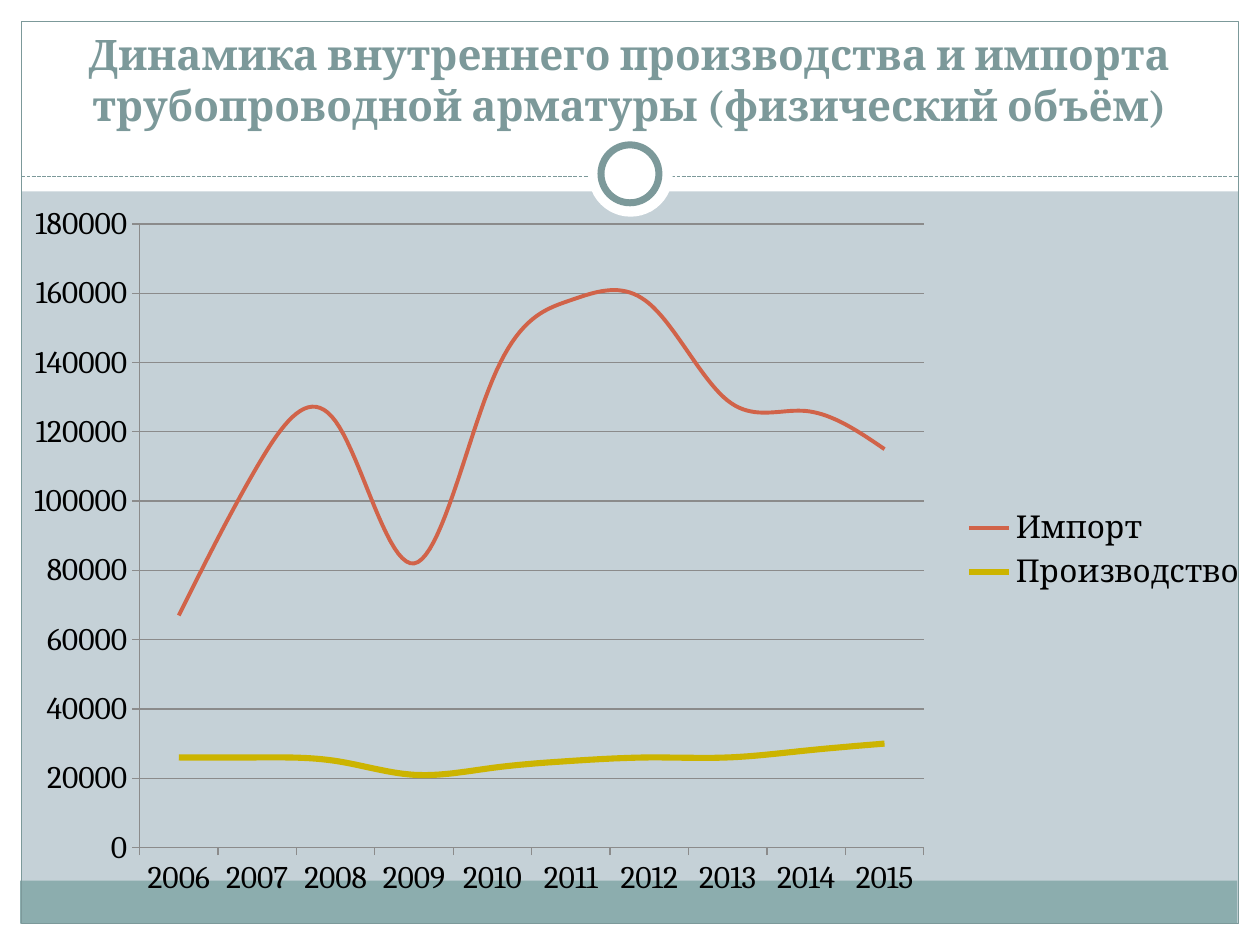
"""Build a slide with a line chart of pipeline valve imports and production."""
from lxml import etree
from pptx import Presentation
from pptx.chart.data import CategoryChartData
from pptx.dml.color import RGBColor
from pptx.enum.chart import XL_CHART_TYPE, XL_LEGEND_POSITION, XL_MARKER_STYLE, XL_TICK_MARK
from pptx.enum.dml import MSO_LINE
from pptx.enum.shapes import MSO_CONNECTOR, MSO_SHAPE
from pptx.enum.text import MSO_ANCHOR, MSO_AUTO_SIZE, PP_ALIGN
from pptx.oxml.ns import qn
from pptx.util import Inches, Pt

RECTANGLE, OVAL = MSO_SHAPE.RECTANGLE, MSO_SHAPE.OVAL
STRAIGHT, DASH = MSO_CONNECTOR.STRAIGHT, MSO_LINE.SQUARE_DOT
LINE_CHART, RIGHT = XL_CHART_TYPE.LINE, XL_LEGEND_POSITION.RIGHT
OUTSIDE, NO_MARKER = XL_TICK_MARK.OUTSIDE, XL_MARKER_STYLE.NONE
CENTER, BOTTOM, NO_FIT = PP_ALIGN.CENTER, MSO_ANCHOR.BOTTOM, MSO_AUTO_SIZE.NONE

FONT = "Cambria"
COLORS = {
    "background": "C5D1D7", "white": "FFFFFF", "band": "8CADAE", "accent": "7C999A",
    "import": "D16349", "production": "CCB400", "axis": "8B8B8B", "text": "000000",
}
TITLE = "Динамика внутреннего производства и импорта трубопроводной арматуры (физический объём)"
YEARS = [str(year) for year in range(2006, 2016)]
SERIES = [
    ("Импорт", "import", 2.25,
     [67000, 110000, 123000, 82000, 135000, 158000, 157000, 129000, 126000, 115000]),
    ("Производство", "production", 3.5,
     [26000, 26000, 25000, 21000, 23000, 25000, 26000, 26000, 28000, 30000]),
]
DECORATIONS = [
    (RECTANGLE, (0, 7.33, 10, 0.17), "white", None, 0),
    (RECTANGLE, (0, 0, 10, 1.52), "white", None, 0),
    (RECTANGLE, (0, 0, 0.17, 7.5), "white", None, 0),
    (RECTANGLE, (9.83, 0, 0.17, 7.5), "white", None, 0),
    (RECTANGLE, (0.16, 6.99, 9.66, 0.34), "band", None, 0),
    (RECTANGLE, (0.17, 0.17, 9.66, 7.16), None, "accent", 0.75),
]
RINGS = [
    (OVAL, (4.67, 1.05, 0.67, 0.67), "white", None, 0),
    (OVAL, (4.77, 1.15, 0.46, 0.46), "white", "accent", 4),
]
PLOT_LAYOUT = {"layoutTarget": "inner", "xMode": "edge", "yMode": "edge",
               "x": 0.1, "y": 0.04, "w": 0.63, "h": 0.87}
LEGEND_LAYOUT = {"xMode": "edge", "yMode": "edge", "x": 0.76, "y": 0.43, "w": 0.23, "h": 0.13}


def color(name):
    return RGBColor.from_string(COLORS[name])


def style_line(line, name, width):
    line.color.rgb = color(name)
    line.width = Pt(width)


def add_decoration(slide, kind, place, fill, outline, width):
    shape = slide.shapes.add_shape(kind, *map(Inches, place))
    shape.shadow.inherit = False
    if fill:
        shape.fill.solid()
        shape.fill.fore_color.rgb = color(fill)
    else:
        shape.fill.background()
    if outline:
        style_line(shape.line, outline, width)
    else:
        shape.line.fill.background()


def add_divider(slide):
    divider = slide.shapes.add_connector(
        STRAIGHT, Inches(0.17), Inches(1.4), Inches(9.83), Inches(1.4))
    style_line(divider.line, "accent", 0.75)
    divider.line.dash_style = DASH
    etree.SubElement(divider._element.spPr, qn("a:effectLst"))


def format_title(slide):
    title = slide.shapes.title
    title.left, title.top, title.width, title.height = map(Inches, (0.33, 0.25, 9.33, 0.83))
    frame = title.text_frame
    frame.text = TITLE
    frame.word_wrap = True
    frame.auto_size = NO_FIT
    frame.vertical_anchor = BOTTOM
    para = frame.paragraphs[0]
    para.alignment = CENTER
    para.font.name, para.font.size, para.font.bold = FONT, Pt(24), True
    para.font.color.rgb = color("accent")
    slide.shapes._spTree.append(title._element)


def set_layout(parent, anchor, values):
    for old in parent.findall(qn("c:layout")):
        parent.remove(old)
    layout = etree.Element(qn("c:layout"))
    manual = etree.SubElement(layout, qn("c:manualLayout"))
    for name, value in values.items():
        etree.SubElement(manual, qn(f"c:{name}")).set("val", str(value))
    if anchor is None:
        parent.insert(0, layout)
    else:
        anchor.addnext(layout)


def add_line_chart(slide):
    data = CategoryChartData()
    data.categories = YEARS
    for name, _, _, values in SERIES:
        data.add_series(name, values)
    chart = slide.shapes.add_chart(
        LINE_CHART, *map(Inches, (0.12, 1.55, 9.88, 5.69)), data).chart
    chart.has_title = False
    chart.font.name, chart.font.size = FONT, Pt(18)
    chart.font.color.rgb = color("text")
    chart.has_legend = True
    chart.legend.position = RIGHT
    chart.legend.include_in_layout = False
    plot = chart.plots[0]
    plot.vary_by_categories = False
    for series, (_, name, width, _) in zip(plot.series, SERIES):
        series.smooth = True
        series.marker.style = NO_MARKER
        style_line(series.format.line, name, width)
    for axis in (chart.category_axis, chart.value_axis):
        axis.major_tick_mark = OUTSIDE
        style_line(axis.format.line, "axis", 0.75)
    values = chart.value_axis
    values.minimum_scale, values.maximum_scale, values.major_unit = 0, 180000, 20000
    values.has_major_gridlines = True
    style_line(values.major_gridlines.format.line, "axis", 0.75)
    set_layout(chart._chartSpace.chart.plotArea, None, PLOT_LAYOUT)
    legend = chart.legend._element
    set_layout(legend, legend.find(qn("c:legendPos")), LEGEND_LAYOUT)


def main():
    deck = Presentation()
    deck.slide_width, deck.slide_height = Inches(10), Inches(7.5)
    slide = deck.slides.add_slide(deck.slide_layouts[5])
    slide.background.fill.solid()
    slide.background.fill.fore_color.rgb = color("background")
    for decoration in DECORATIONS:
        add_decoration(slide, *decoration)
    add_divider(slide)
    for ring in RINGS:
        add_decoration(slide, *ring)
    format_title(slide)
    add_line_chart(slide)
    deck.save("out.pptx")


if __name__ == "__main__":
    main()
